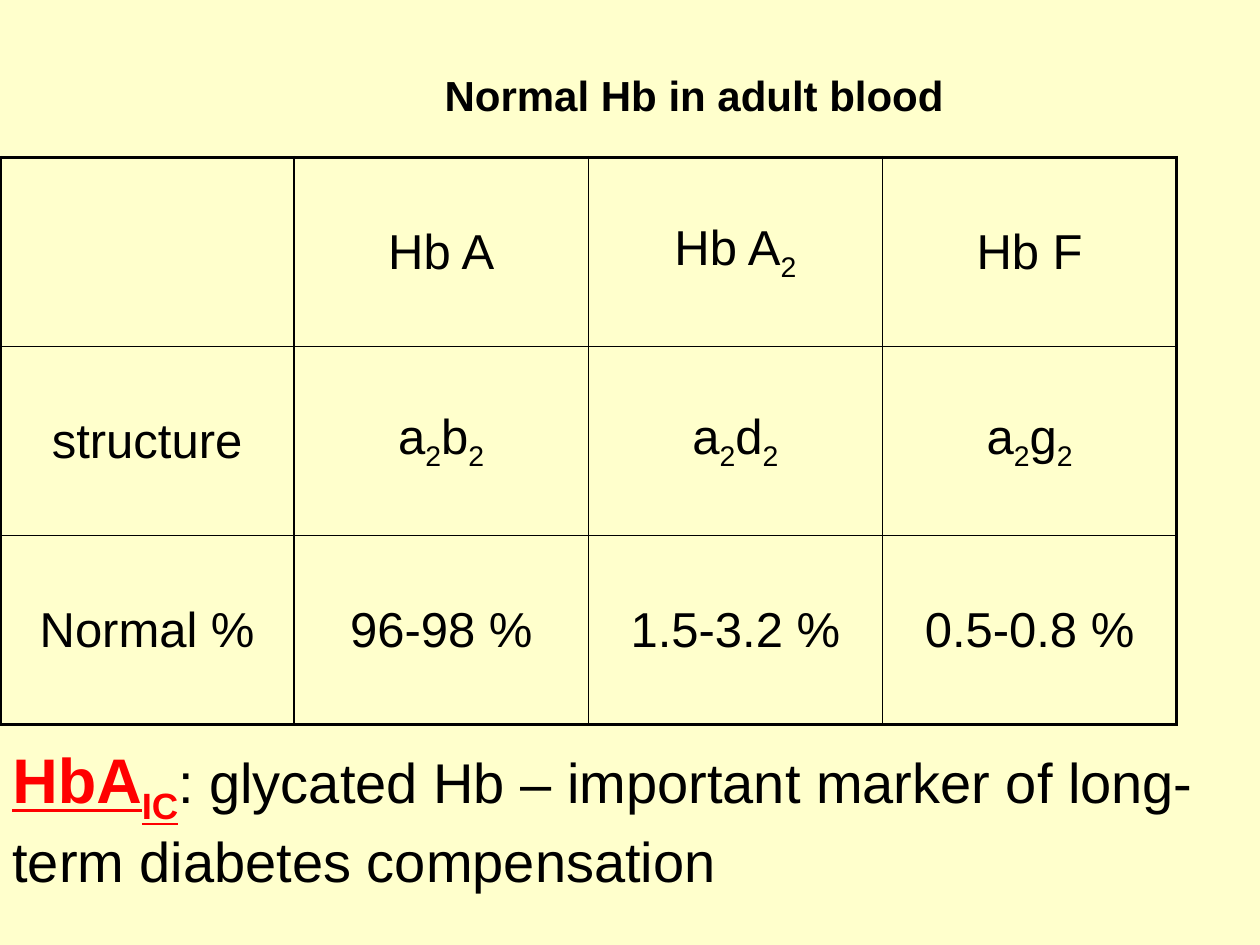
import pptx
import pptx.dml.color
import pptx.enum.text
import pptx.oxml.ns
import pptx.util
from lxml import etree
from pptx.util import Inches

COLORS = {"background": "FFFFCC", "text": "000000", "accent": "FF0000"}
ALIGN = pptx.enum.text.PP_ALIGN
ANCHOR = pptx.enum.text.MSO_ANCHOR
HEMOGLOBINS = [
    ["", "Hb A", "Hb A_2", "Hb F"],
    ["structure", "a_2b_2", "a_2d_2", "a_2g_2"],
    ["Normal %", "96-98 %", "1.5-3.2 %", "0.5-0.8 %"],
]
THIN, THICK = 1, 2.25


def rgb(name):
    return pptx.dml.color.RGBColor.from_string(COLORS[name])


def add_run(p, text, size, color="text", subscript=False, **formats):
    r = p.add_run()
    r.text = text
    r.font.color.rgb = rgb(color)
    values = {"name": "Arial", "size": pptx.util.Pt(size), **formats}
    for key, value in values.items():
        setattr(r.font, key, value)
    if subscript:
        r.font._element.set("baseline", "-25000")


def add_marked_text(p, text, size):
    """Write text in which the character after each "_" is a subscript."""
    first, *rest = text.split("_")
    if first:
        add_run(p, first, size)
    for part in rest:
        add_run(p, part[0], size, subscript=True)
        if part[1:]:
            add_run(p, part[1:], size)


def add_textbox(s, left, top, width, height):
    tf = s.shapes.add_textbox(*map(Inches, (left, top, width, height))).text_frame
    tf.word_wrap = True
    tf.vertical_anchor = ANCHOR.TOP
    return tf


def set_borders(cell, widths):
    tc_pr = cell._tc.get_or_add_tcPr()
    qn = pptx.oxml.ns.qn
    for i, (side, width) in enumerate(widths.items()):
        line = etree.Element(qn(f"a:ln{side}"), w=str(pptx.util.Pt(width)))
        fill = etree.SubElement(line, qn("a:solidFill"))
        etree.SubElement(fill, qn("a:srgbClr"), val=COLORS["text"])
        tc_pr.insert(i, line)


def add_grid(s, rows, left, top, width, height):
    n_rows, n_cols = len(rows), len(rows[0])
    box = map(Inches, (left, top, width, height))
    table = s.shapes.add_table(n_rows, n_cols, *box).table
    table.first_row = table.horz_banding = False
    for i, row in enumerate(rows):
        for j, text in enumerate(row):
            cell = table.cell(i, j)
            cell.fill.background()
            cell.vertical_anchor = ANCHOR.MIDDLE
            p = cell.text_frame.paragraphs[0]
            p.alignment = ALIGN.CENTER
            add_marked_text(p, text, 28)
            outer = {"L": j == 0, "R": j == n_cols - 1,
                     "T": i == 0, "B": i == n_rows - 1}
            set_borders(cell, {side: THICK if edge else THIN
                               for side, edge in outer.items()})


def main():
    prs = pptx.Presentation()
    prs.slide_width, prs.slide_height = Inches(10), Inches(7.5)
    s = prs.slides.add_slide(prs.slide_layouts[6])
    s.background.fill.solid()
    s.background.fill.fore_color.rgb = rgb("background")

    p = add_textbox(s, 1.26, 0.5, 8.5, 1.25).paragraphs[0]
    p.alignment = ALIGN.CENTER
    add_run(p, "Normal Hb in adult blood", 24, bold=True)

    add_grid(s, HEMOGLOBINS, 0, 1.25, 9.34, 4.5)

    p = add_textbox(s, 0, 5.83, 10, 1.25).paragraphs[0]
    marker = {"size": 36, "color": "accent", "bold": True, "underline": True}
    add_run(p, "HbA", **marker)
    add_run(p, "IC", subscript=True, **marker)
    add_run(p, ": glycated Hb – important marker of long-term diabetes compensation", 32)

    prs.save("out.pptx")


if __name__ == "__main__":
    main()
